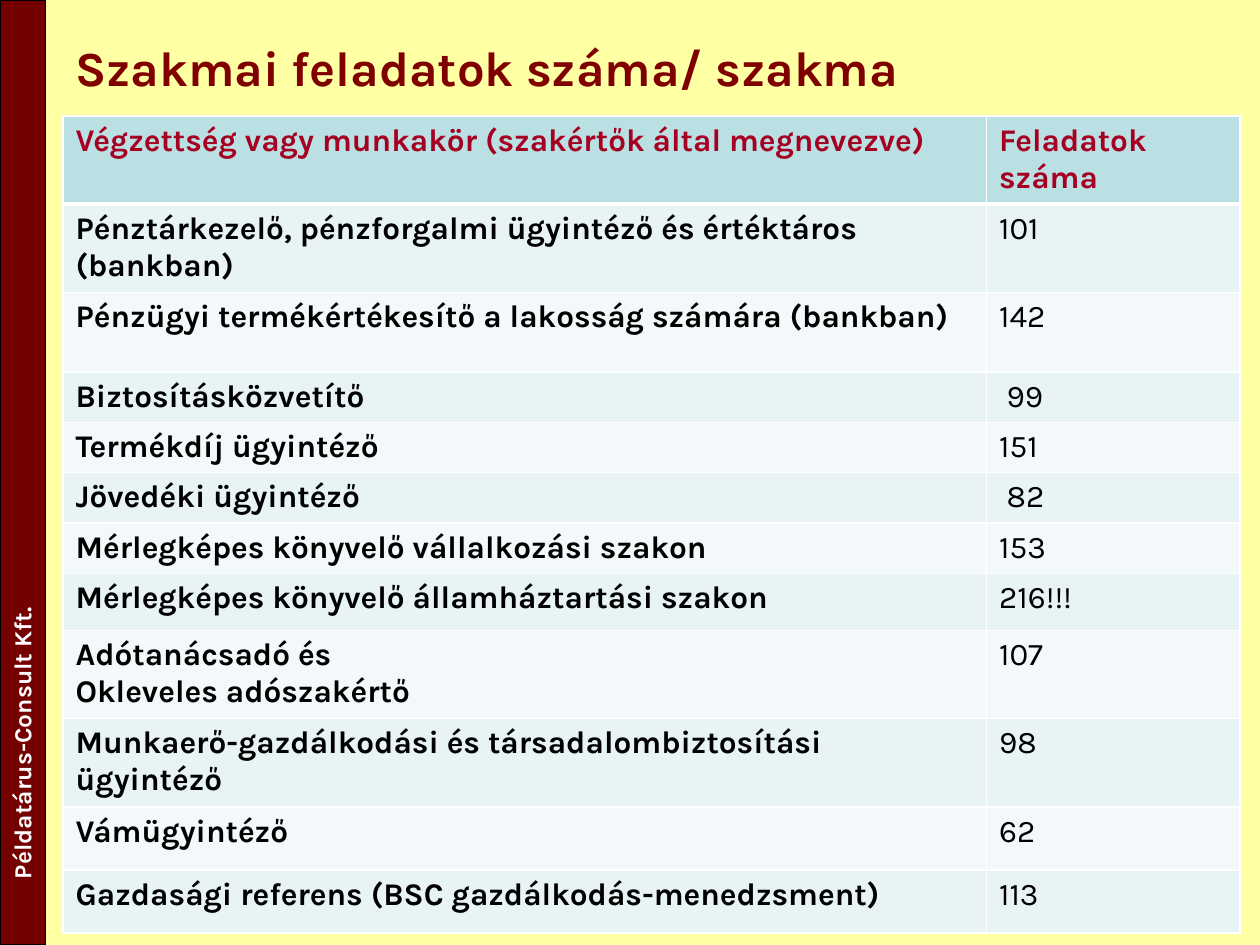
from lxml.etree import SubElement
from pptx import Presentation
from pptx.dml.color import RGBColor
from pptx.enum.shapes import MSO_SHAPE
from pptx.enum.text import MSO_ANCHOR
from pptx.oxml.ns import qn
from pptx.util import Inches, Pt

TITLE = "Szakmai feladatok száma/ szakma"
COMPANY = "Példatárus-Consult Kft."
HEADER = ("Végzettség vagy munkakör (szakértők által megnevezve)", "Feladatok száma")
# job, number of tasks, row height
JOBS = [
    ("Pénztárkezelő, pénzforgalmi ügyintéző és értéktáros (bankban)", "101", 0.69),
    ("Pénzügyi termékértékesítő a lakosság számára (bankban)", "142", 0.63),
    ("Biztosításközvetítő", "99", 0.4),
    ("Termékdíj ügyintéző", "151", 0.4),
    ("Jövedéki ügyintéző", "82", 0.39),
    ("Mérlegképes könyvelő vállalkozási szakon", "153", 0.39),
    ("Mérlegképes könyvelő államháztartási szakon", "216!!!", 0.45),
    ("Adótanácsadó és\nOkleveles adószakértő", "107", 0.69),
    ("Munkaerő-gazdálkodási és társadalombiztosítási ügyintéző", "98", 0.69),
    ("Vámügyintéző", "62", 0.5),
    ("Gazdasági referens (BSC gazdálkodás-menedzsment)", "113", 0.5),
]
INDENTED_COUNTS = ("99", "82")
HEADER_HEIGHT = 0.69
COLUMN_WIDTHS = (7.33, 2.01)

FONT = "Karla"
CREAM = RGBColor(0xFF, 0xFF, 0xA3)
MAROON = RGBColor(0x74, 0x00, 0x00)
TITLE_RED = RGBColor(0x80, 0x00, 0x00)
HEADER_RED = RGBColor(0xA5, 0x00, 0x21)
BLACK = RGBColor(0, 0, 0)
WHITE = RGBColor(0xFF, 0xFF, 0xFF)
HEADER_FILL = RGBColor(0xBB, 0xE0, 0xE3)
BANDS = (RGBColor(0xE7, 0xF3, 0xF4), RGBColor(0xF3, 0xF9, 0xFA))


def write(frame, text, size=18, color=BLACK, bold=True, anchor=MSO_ANCHOR.TOP):
    frame.word_wrap = True
    frame.vertical_anchor = anchor
    frame.text = text
    for paragraph in frame.paragraphs:
        font = paragraph.font
        font.name, font.size, font.bold = FONT, Pt(size), bold
        font.color.rgb = color


def sideways(center_x, center_y, length, thickness):
    """Return the unrotated box of an item that is then turned by 270 degrees."""
    return [Inches(v) for v in (center_x - length / 2, center_y - thickness / 2,
                                length, thickness)]


def add_borders(cell, top=1, bottom=1):
    properties = cell._tc.get_or_add_tcPr()
    for side, width in (("L", 1), ("R", 1), ("T", top), ("B", bottom)):
        line = SubElement(properties, qn(f"a:ln{side}"), w=str(Pt(width)))
        fill = SubElement(line, qn("a:solidFill"))
        SubElement(fill, qn("a:srgbClr"), val=str(WHITE))


def fill_cell(cell, text, fill, top=1, bottom=1, **text_format):
    add_borders(cell, top, bottom)
    cell.fill.solid()
    cell.fill.fore_color.rgb = fill
    write(cell.text_frame, text, **text_format)


presentation = Presentation()
presentation.slide_width, presentation.slide_height = Inches(10), Inches(7.5)
slide = presentation.slides.add_slide(presentation.slide_layouts[6])
slide.background.fill.solid()
slide.background.fill.fore_color.rgb = CREAM

side_bar = slide.shapes.add_shape(MSO_SHAPE.RECTANGLE, *sideways(0.18, 3.75, 7.5, 0.36))
side_bar.rotation = 270
side_bar.shadow.inherit = False
side_bar.fill.solid()
side_bar.fill.fore_color.rgb = MAROON
side_bar.line.color.rgb = BLACK
side_bar.line.width = Pt(0.75)

company = slide.shapes.add_textbox(*sideways(0.17, 5.59, 2.97, 0.33))
company.rotation = 270
write(company.text_frame, COMPANY, size=14, color=WHITE)

title = slide.shapes.add_textbox(Inches(0.5), Inches(0.3), Inches(9.22), Inches(0.46))
write(title.text_frame, TITLE, size=28, color=TITLE_RED, anchor=MSO_ANCHOR.MIDDLE)

heights = [HEADER_HEIGHT] + [height for _, _, height in JOBS]
table = slide.shapes.add_table(
    len(heights), len(COLUMN_WIDTHS), Inches(0.5), Inches(0.92),
    Inches(sum(COLUMN_WIDTHS)), Inches(sum(heights))).table
for column, width in zip(table.columns, COLUMN_WIDTHS):
    column.width = Inches(width)
for row, height in zip(table.rows, heights):
    row.height = Inches(height)

for column, heading in enumerate(HEADER):
    fill_cell(table.cell(0, column), heading, HEADER_FILL, bottom=3, color=HEADER_RED)
for row, (job, count, _) in enumerate(JOBS, start=1):
    band = BANDS[(row - 1) % 2]
    top = 3 if row == 1 else 1
    fill_cell(table.cell(row, 0), job, band, top=top)
    count_cell = table.cell(row, 1)
    fill_cell(count_cell, count, band, top=top, bold=False)
    if count in INDENTED_COUNTS:
        count_cell.margin_left = Inches(0.16)

presentation.save("out.pptx")
